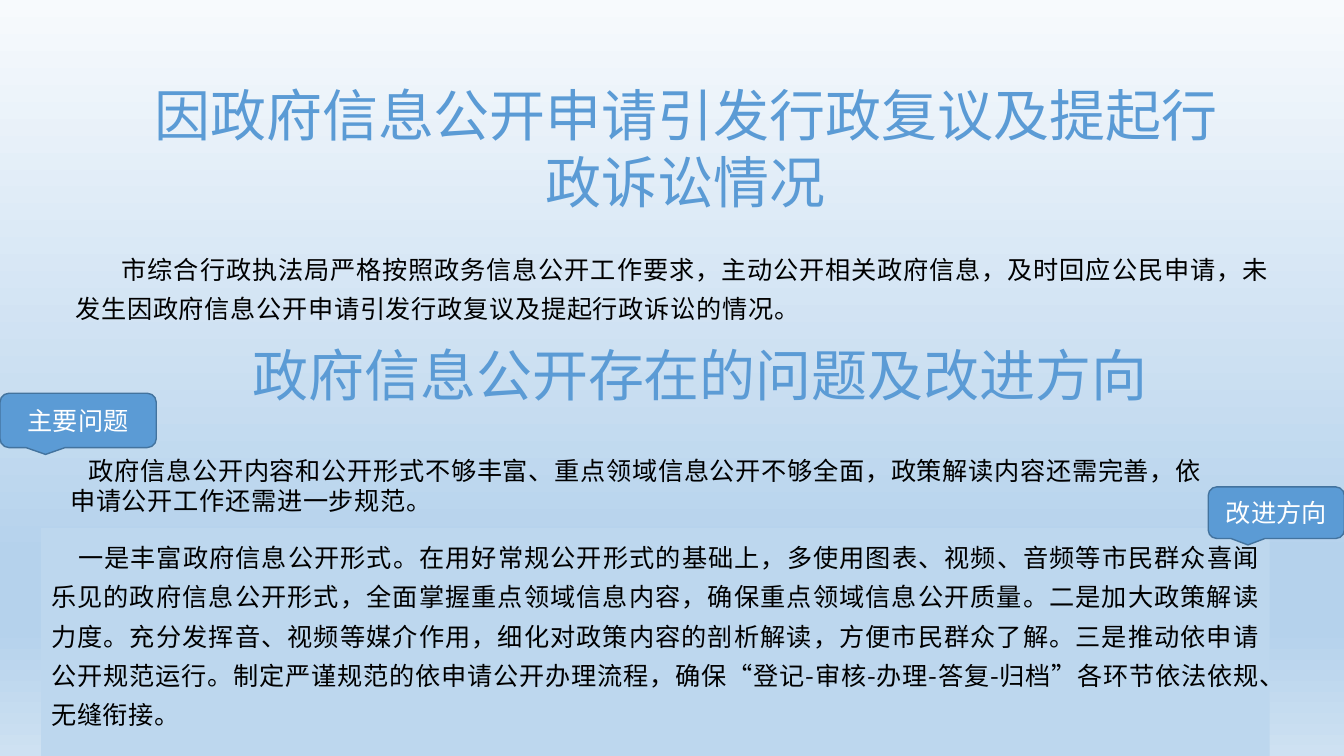
"""Build the slide on disclosure disputes, open problems and improvements."""
from copy import deepcopy
from dataclasses import dataclass

from pptx import Presentation
from pptx.dml.color import RGBColor
from pptx.enum.shapes import MSO_SHAPE
from pptx.enum.text import MSO_ANCHOR, PP_ALIGN
from pptx.oxml.ns import qn
from pptx.oxml.xmlchemy import OxmlElement
from pptx.util import Cm, Pt

DISPUTES_TITLE = "因政府信息公开申请引发行政复议及提起行政诉讼情况"
DISPUTES = "市综合行政执法局严格按照政务信息公开工作要求，主动公开相关政府信息，及时回应公民申请，未发生因政府信息公开申请引发行政复议及提起行政诉讼的情况。"
PROBLEMS_TITLE = "政府信息公开存在的问题及改进方向"
PROBLEMS = "政府信息公开内容和公开形式不够丰富、重点领域信息公开不够全面，政策解读内容还需完善，依申请公开工作还需进一步规范。"
IMPROVEMENTS = (
    "一是丰富政府信息公开形式。在用好常规公开形式的基础上，多使用图表、视频、音频等市民群众喜闻乐见的政府信息公开形式，全面掌握重点领域信息内容，确保重点领域信息公开质量。"
    "二是加大政策解读力度。充分发挥音、视频等媒介作用，细化对政策内容的剖析解读，方便市民群众了解。"
    "三是推动依申请公开规范运行。制定严谨规范的依申请公开办理流程，确保“登记-审核-办理-答复-归档”各环节依法依规、无缝衔接。"
)
CALLOUTS = [
    ("改进方向", (30.45, 12.27, 3.43, 1.3)),
    ("主要问题", (0, 9.91, 3.94, 1.37)),
]
BACKGROUND_STOPS = [(0, "F7FAFD"), (0.74, "B5D2EC"), (0.83, "B5D2EC"), (1, "CEE1F2")]


@dataclass(frozen=True)
class Theme:
    accent: str = "5B9BD5"
    edge: str = "43739E"
    panel: str = "BDD7EE"
    ink: str = "000000"
    white: str = "FFFFFF"
    title_font: str = "Arial"
    body_font: str = "Noto Sans CJK SC"
    label_font: str = "Calibri"
    title_size: int = 40
    body_size: int = 18


THEME = Theme()


def color(value):
    return RGBColor.from_string(value)


def place(shape, area):
    shape.left, shape.top, shape.width, shape.height = map(Cm, area)
    return shape


def write(shape, text, font, size, ink, align, anchor=MSO_ANCHOR.TOP,
          spacing=1, after=0, indent=0, tracking=0, insets=(0.25, 0.13)):
    frame = shape.text_frame
    frame.word_wrap = True
    frame.vertical_anchor = anchor
    frame.margin_left = frame.margin_right = Cm(insets[0])
    frame.margin_top = frame.margin_bottom = Cm(insets[1])
    para = frame.paragraphs[0]
    para.alignment = align
    para.line_spacing = spacing
    para.space_before, para.space_after = Pt(0), Pt(after)
    properties = para._p.get_or_add_pPr()
    properties.set("marL", "0")
    properties.set("indent", str(Cm(indent)))
    properties.append(OxmlElement("a:buNone"))
    span = para.add_run()
    span.text = text
    span.font.name, span.font.size = font, Pt(size)
    span.font.color.rgb = color(ink)
    run_properties = span._r.get_or_add_rPr()
    run_properties.set("lang", "zh-CN")
    run_properties.set("spc", str(tracking))
    east_asian = OxmlElement("a:ea")
    east_asian.set("typeface", font)
    run_properties.find(qn("a:latin")).addnext(east_asian)


def write_title(shape, text):
    write(shape, text, THEME.title_font, THEME.title_size, THEME.accent, PP_ALIGN.CENTER)


def write_body(shape, text, indent, align=PP_ALIGN.JUSTIFY, **layout):
    write(shape, text, THEME.body_font, THEME.body_size, THEME.ink, align,
          indent=indent, tracking=50, **layout)


def paint_background(page):
    fill = page.background.fill
    fill.gradient()
    fill.gradient_angle = 270
    stop_list = next(page.element.iter(qn("a:gsLst")))
    while len(stop_list) < len(BACKGROUND_STOPS):
        stop_list.append(deepcopy(stop_list[0]))
    for stop, (position, value) in zip(fill.gradient_stops, BACKGROUND_STOPS):
        stop.position = position
        stop.color.rgb = color(value)


def add_filled(page, kind, area, fill):
    shape = page.shapes.add_shape(kind, *map(Cm, area))
    shape.shadow.inherit = False
    shape.fill.solid()
    shape.fill.fore_color.rgb = color(fill)
    shape.line.fill.background()
    return shape


def main():
    deck = Presentation()
    deck.slide_width, deck.slide_height = Cm(33.87), Cm(19.05)
    page = deck.slides.add_slide(deck.slide_layouts[1])
    paint_background(page)

    write_title(place(page.shapes.title, (3.45, 1.9, 27.66, 3.68)), DISPUTES_TITLE)
    write_body(place(page.placeholders[1], (1.7, 6.07, 30.48, 2.39)), DISPUTES, 1.17,
               spacing=1.3, after=8, insets=(0.2, 0.1))

    heading = page.shapes.add_textbox(*map(Cm, (3.63, 8.46, 28.02, 1.96)))
    write_title(heading, PROBLEMS_TITLE)
    problems = page.shapes.add_textbox(*map(Cm, (1.52, 11.35, 29.59, 1.96)))
    write_body(problems, PROBLEMS, 0.47, PP_ALIGN.LEFT)

    panel = add_filled(page, MSO_SHAPE.RECTANGLE, (1.04, 13.31, 30.96, 5.74), THEME.panel)
    write_body(panel, IMPROVEMENTS, 0.68, spacing=1.3, after=8)

    for label, area in CALLOUTS:
        callout = add_filled(page, MSO_SHAPE.ROUNDED_RECTANGULAR_CALLOUT, area, THEME.accent)
        callout.line.color.rgb = color(THEME.edge)
        callout.line.width = Pt(1)
        write(callout, label, THEME.label_font, THEME.body_size, THEME.white,
              PP_ALIGN.CENTER, MSO_ANCHOR.MIDDLE)

    deck.save("out.pptx")


if __name__ == "__main__":
    main()
